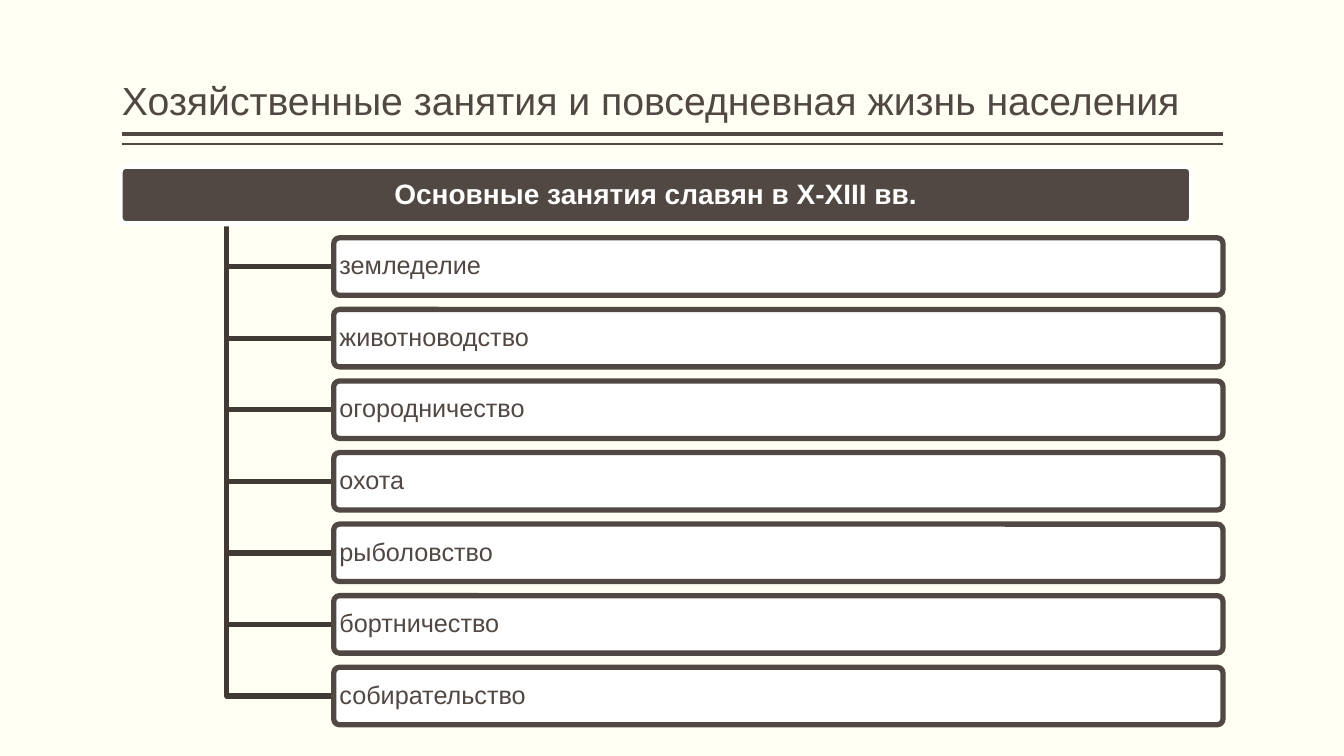
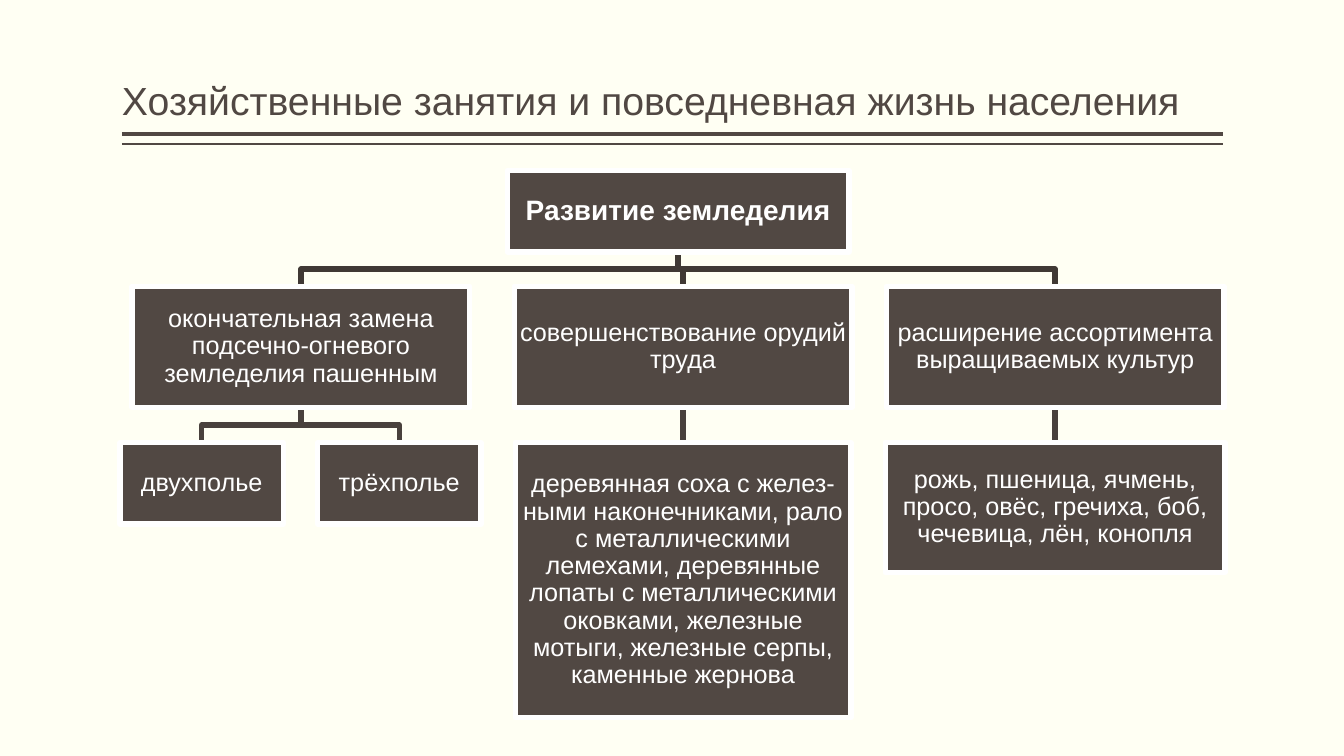
from lxml import etree
from pptx import Presentation
from pptx.dml.color import RGBColor
from pptx.enum import shapes, text
from pptx.oxml import parse_xml
from pptx.oxml.ns import nsdecls, qn
from pptx.util import Inches, Pt

COLORS = {
    "paper": "FFFFF3",
    "brown": "514843",
    "white": "FFFFFF",
    "branch": "403934",
    "twig": "49413C",
}
COLORS = {name: RGBColor.from_string(value) for name, value in COLORS.items()}
FONT = "Arial"
EDGE = Pt(3.78)
TITLE = "Хозяйственные занятия и повседневная жизнь населения"
SHADOW = (
    f'<a:effectLst {nsdecls("a")}><a:outerShdw blurRad="38100" dist="38100" '
    'dir="2700000" algn="tl"><a:srgbClr val="000000"><a:alpha val="43000"/>'
    "</a:srgbClr></a:outerShdw></a:effectLst>"
)


def write(shape, words, size, color, align, bold=False):
    """Put one paragraph of shadowed text into a shape."""
    para = shape.text_frame.paragraphs[0]
    para.alignment = align
    para.line_spacing = 0.9
    span = para.add_run()
    span.text = words
    span.font.size = Pt(size)
    span.font.bold = bold
    span.font.name = FONT
    span.font.color.rgb = COLORS[color]
    fill = span.font._element.find(qn("a:solidFill"))
    fill.addnext(parse_xml(SHADOW))


def add_box(page, kind, frame, fill, edge, inset):
    """Add a filled, outlined shape ready for text."""
    box = page.shapes.add_shape(kind, *map(Inches, frame))
    box.shadow.inherit = False
    box.fill.solid()
    box.fill.fore_color.rgb = COLORS[fill]
    box.line.color.rgb = COLORS[edge]
    box.line.width = EDGE
    if kind == shapes.MSO_SHAPE.ROUNDED_RECTANGLE:
        box.adjustments[0] = 0.1
    frame = box.text_frame
    frame.word_wrap = True
    frame.vertical_anchor = text.MSO_ANCHOR.MIDDLE
    frame.margin_left = frame.margin_right = Inches(inset)
    frame.margin_top = frame.margin_bottom = Inches(0.01)
    return box


deck = Presentation()
deck.slide_width = Inches(13.33)
deck.slide_height = Inches(7.5)

# Shared layout: background and title place
layout = deck.slide_layouts[5]
layout.background.fill.solid()
layout.background.fill.fore_color.rgb = COLORS["paper"]
heading = layout.placeholders[0]
heading.left, heading.top = Inches(1.21), Inches(0.08)
heading.width, heading.height = Inches(10.92), Inches(1.2)
frame = heading.text_frame
frame.margin_left = frame.margin_right = 0
frame.vertical_anchor = text.MSO_ANCHOR.BOTTOM
frame.auto_size = text.MSO_AUTO_SIZE.NONE

# Both pages with their titles
pages = [deck.slides.add_slide(layout) for _ in range(2)]
for page in pages:
    write(page.shapes.title, TITLE, 28, "brown", text.PP_ALIGN.LEFT)

# Double rule under the title, moved to the layout
for y, weight in ((1.33, 3), (1.43, 1)):
    rule = pages[0].shapes.add_connector(
        shapes.MSO_CONNECTOR.STRAIGHT, Inches(1.21), Inches(y), Inches(12.13), Inches(y))
    rule.line.color.rgb = COLORS["brown"]
    rule.line.width = Pt(weight)
    etree.SubElement(rule._element.spPr, qn("a:effectLst"))
    layout.shapes._spTree.append(rule._element)

elbows = []  # page, colour, corner points
LEFT, CENTER = text.PP_ALIGN.LEFT, text.PP_ALIGN.CENTER

# Page 1: list of occupations hanging from a header
ROUNDED = shapes.MSO_SHAPE.ROUNDED_RECTANGLE
header = add_box(pages[0], ROUNDED, (1.19, 1.65, 10.63, 0.57), "brown", "white", 0.04)
write(header, "Основные занятия славян в X-XIII вв.", 20, "white", CENTER, bold=True)
occupations = ["земледелие", "животноводство", "огородничество", "охота",
               "рыболовство", "бортничество", "собирательство"]
for index, words in enumerate(occupations):
    top = 2.36 + 0.71 * index
    item = add_box(pages[0], ROUNDED, (3.31, top, 8.82, 0.57), "white", "brown", 0.04)
    write(item, words, 18, "brown", LEFT)
    middle = top + 0.57 / 2
    elbows.append((pages[0], "branch", [(2.25, 2.22), (2.25, middle), (3.31, middle)]))

# Page 2: tree of boxes, name: (left, top, width, height), text
nodes = {
    "root": ((5.03, 1.69, 3.39, 0.81), "Развитие земледелия"),
    "ploughing": ((1.31, 2.84, 3.35, 1.2),
                  "окончательная замена подсечно-огневого земледелия пашенным"),
    "two_field": ((1.19, 4.39, 1.62, 0.81), "двухполье"),
    "three_field": ((3.15, 4.39, 1.62, 0.81), "трёхполье"),
    "tools": ((5.1, 2.84, 3.35, 1.2), "совершенствование орудий труда"),
    "tool_list": ((5.11, 4.39, 3.33, 2.73),
                  "деревянная соха с желез- ными наконечниками, рало с металлическими "
                  "лемехами, деревянные лопаты с металлическими оковками, железные "
                  "мотыги, железные серпы, каменные жернова"),
    "crops": ((8.79, 2.84, 3.35, 1.2), "расширение ассортимента выращиваемых культур"),
    "crop_list": ((8.78, 4.39, 3.37, 1.29),
                  "рожь, пшеница, ячмень, просо, овёс, гречиха, боб, чечевица, лён, конопля"),
}
boxes = {}
for name, (place, words) in nodes.items():
    is_root = name == "root"
    boxes[name] = add_box(pages[1], shapes.MSO_SHAPE.RECTANGLE, place, "brown", "white", 0.01)
    write(boxes[name], words, 20 if is_root else 18, "white", CENTER, bold=is_root)

# Bent branches of the tree
for parent, child, color in (
    ("root", "ploughing", "branch"), ("root", "tools", "branch"), ("root", "crops", "branch"),
    ("ploughing", "two_field", "twig"), ("ploughing", "three_field", "twig"),
):
    left, top, width, height = nodes[parent][0]
    start_x, start_y = left + width / 2, top + height
    left, top, width, height = nodes[child][0]
    end_x, half = left + width / 2, (start_y + top) / 2
    elbows.append((pages[1], color,
                   [(start_x, start_y), (start_x, half), (end_x, half), (end_x, top)]))

# Straight branches, kept behind the boxes
for parent, child in (("tools", "tool_list"), ("crops", "crop_list")):
    twig = pages[1].shapes.add_connector(shapes.MSO_CONNECTOR.STRAIGHT, 0, 0, 0, 0)
    twig.begin_connect(boxes[parent], 2)
    twig.end_connect(boxes[child], 0)
    twig.line.color.rgb = COLORS["twig"]
    twig.line.width = EDGE
    etree.SubElement(twig._element.spPr, qn("a:effectLst"))
    pages[1].shapes._spTree.insert(2, twig._element)

# Bent lines of both pages, kept behind the boxes
for page, color, points in elbows:
    corners = [(Inches(x), Inches(y)) for x, y in points]
    builder = page.shapes.build_freeform(*corners[0])
    builder.add_line_segments(corners[1:], close=False)
    elbow = builder.convert_to_shape()
    elbow.shadow.inherit = False
    elbow.fill.background()
    elbow.line.color.rgb = COLORS[color]
    elbow.line.width = EDGE
    page.shapes._spTree.insert(2, elbow._element)

deck.save("out.pptx")
